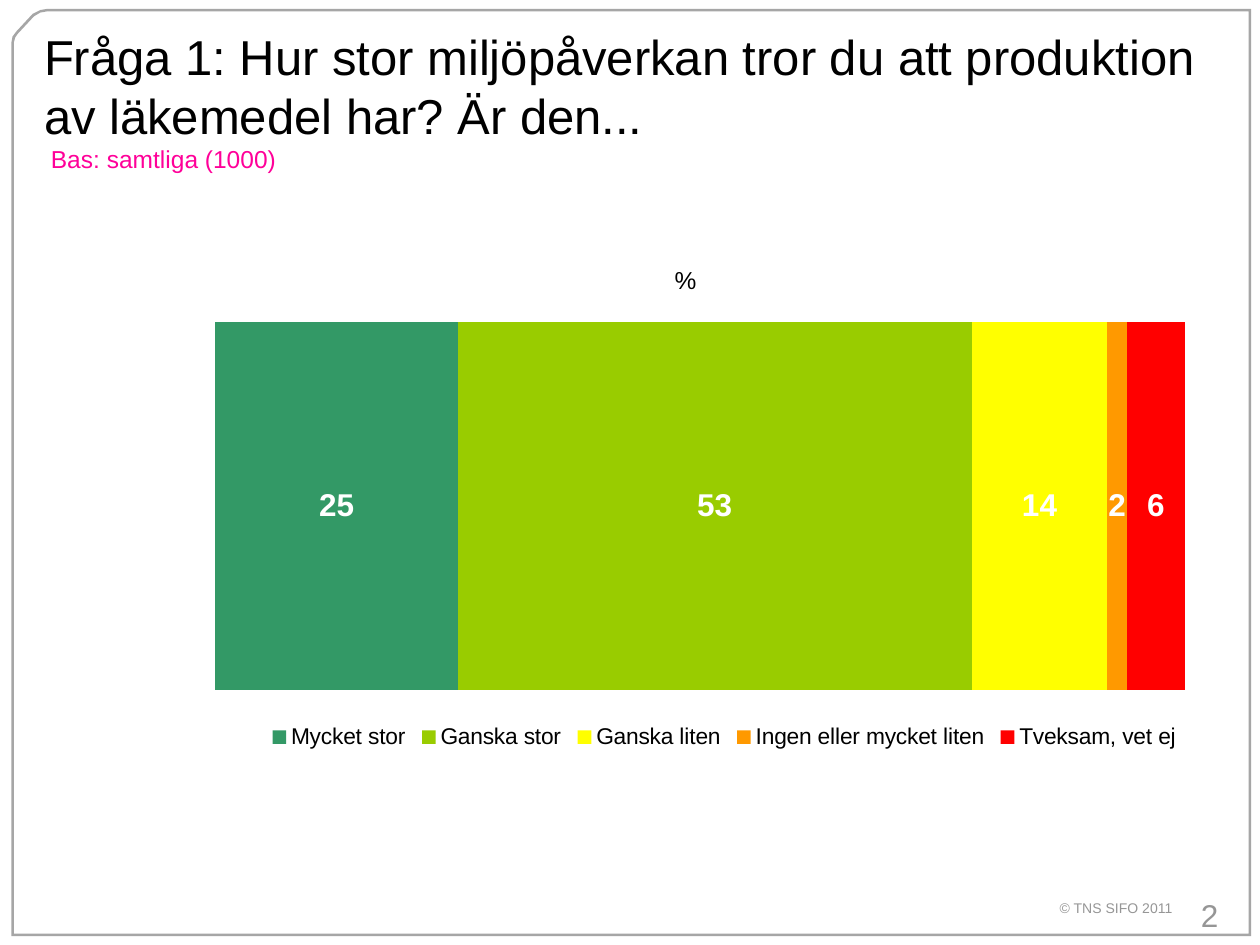
from lxml.etree import SubElement
from pptx import Presentation
from pptx.chart.data import CategoryChartData
from pptx.dml.color import RGBColor
from pptx.enum.chart import XL_CHART_TYPE, XL_LEGEND_POSITION, XL_TICK_LABEL_POSITION, XL_TICK_MARK
from pptx.enum.text import MSO_ANCHOR, MSO_AUTO_SIZE, PP_ALIGN
from pptx.oxml.ns import qn
from pptx.util import Inches, Pt

COLUMNS, ROWS = 100, 75
BLACK, WHITE, GREY, FRAME_GREY, PINK = "000000", "FFFFFF", "969696", "A6A6A6", "FF0099"
ANSWERS = [
    ("Mycket stor", 25, "339966"),
    ("Ganska stor", 53, "99CC00"),
    ("Ganska liten", 14, "FFFF00"),
    ("Ingen eller mycket liten", 2, "FF9900"),
    ("Tveksam, vet ej", 6, "FF0000"),
]
FRAME_OUTER = [(0.9, 74.3), (0.9, 3.4), (1, 2.9), (1.3, 2.5), (2.6, 1.1),
               (3.2, 0.8), (3.8, 0.7), (99.3, 0.7), (99.3, 74.3)]
FRAME_INNER = [(1.1, 74.1), (1.1, 3.4), (1.2, 3), (1.4, 2.7), (2.7, 1.3),
               (3.2, 1), (3.8, 0.9), (99.1, 0.9), (99.1, 74.1)]


def color(value):
    return RGBColor.from_string(value)


def set_font(font, size, value, bold=False):
    font.name = "Arial"
    font.size = Pt(size)
    font.bold = bold
    font.color.rgb = color(value)


def set_layout(parent, before, **shares):
    for old in parent.findall(qn("c:layout")):
        parent.remove(old)
    layout = SubElement(parent, qn("c:layout"))
    manual = SubElement(layout, qn("c:manualLayout"))
    if before == "c:barChart":
        SubElement(manual, qn("c:layoutTarget")).set("val", "inner")
    for name in ("xMode", "yMode"):
        SubElement(manual, qn(f"c:{name}")).set("val", "edge")
    for name, share in shares.items():
        SubElement(manual, qn(f"c:{name}")).set("val", str(share))
    parent.find(qn(before)).addprevious(layout)


class SurveySlide:
    def __init__(self, presentation):
        self.slide = presentation.slides.add_slide(presentation.slide_layouts[5])
        self.column = presentation.slide_width / COLUMNS
        self.row = presentation.slide_height / ROWS

    def place(self, left, top, width, height):
        return (round(left * self.column), round(top * self.row),
                round(width * self.column), round(height * self.row))

    def frame(self, outer, inner):
        builder = self.slide.shapes.build_freeform(
            round(outer[0][0] * self.column), round(outer[0][1] * self.row))
        for index, outline in enumerate((outer, inner)):
            points = [(round(x * self.column), round(y * self.row)) for x, y in outline]
            if index:
                builder.move_to(*points[0])
            builder.add_line_segments(points[1:], close=True)
        shape = builder.convert_to_shape()
        shape.shadow.inherit = False
        shape.fill.solid()
        shape.fill.fore_color.rgb = color(FRAME_GREY)
        shape.line.fill.background()

    def format_frame(self, text_frame, wrap=True):
        text_frame.word_wrap = wrap
        text_frame.auto_size = MSO_AUTO_SIZE.NONE
        text_frame.vertical_anchor = MSO_ANCHOR.TOP
        text_frame.margin_left = text_frame.margin_right = 0
        text_frame.margin_top = text_frame.margin_bottom = 0

    def title(self, question, base, box):
        shape = self.slide.shapes.title
        shape.left, shape.top, shape.width, shape.height = self.place(*box)
        self.format_frame(shape.text_frame)
        paragraph = shape.text_frame.paragraphs[0]
        paragraph.alignment = PP_ALIGN.LEFT
        run = paragraph.add_run()
        run.text = question
        set_font(run.font, 28, BLACK)
        paragraph.add_line_break()
        run = paragraph.add_run()
        run.text = base
        set_font(run.font, 14, PINK)

    def label(self, text, box, size, alignment=PP_ALIGN.LEFT):
        shape = self.slide.shapes.add_textbox(*self.place(*box))
        self.format_frame(shape.text_frame, wrap=False)
        paragraph = shape.text_frame.paragraphs[0]
        paragraph.text = text
        paragraph.alignment = alignment
        set_font(paragraph.font, size, GREY)

    def stacked_bar(self, answers, axis_title, box):
        data = CategoryChartData()
        data.categories = ["1"]
        for name, value, _ in answers:
            data.add_series(name, [value])
        chart = self.slide.shapes.add_chart(
            XL_CHART_TYPE.BAR_STACKED_100, *self.place(*box), data).chart
        chart.has_title = False
        set_font(chart.font, 18, BLACK, bold=True)

        plot = chart.plots[0]
        plot.gap_width, plot.overlap, plot.vary_by_categories = 40, 100, False
        for series, (_, _, fill) in zip(plot.series, answers):
            series.format.fill.solid()
            series.format.fill.fore_color.rgb = color(fill)
            series.data_labels.show_value = True
            set_font(series.data_labels.font, 18, WHITE, bold=True)

        chart.category_axis.visible = False
        chart.category_axis.reverse_order = True
        axis = chart.value_axis
        axis.has_major_gridlines = False
        axis.major_tick_mark = axis.minor_tick_mark = XL_TICK_MARK.NONE
        axis.tick_label_position = XL_TICK_LABEL_POSITION.NONE
        axis.format.line.fill.background()
        paragraph = axis.axis_title.text_frame.paragraphs[0]
        paragraph.text = axis_title
        set_font(paragraph.font, 14, BLACK)

        chart.has_legend = True
        chart.legend.position = XL_LEGEND_POSITION.RIGHT
        chart.legend.include_in_layout = False
        set_font(chart.legend.font, 13, BLACK)

        plot_area = chart.element.find(".//" + qn("c:plotArea"))
        set_layout(plot_area, "c:barChart", x=0.18, y=0.09, w=0.81, h=0.88)
        set_layout(plot_area.find(".//" + qn("c:title")), "c:overlay", x=0.56, y=0.11)
        set_layout(chart.element.find(".//" + qn("c:legend")), "c:overlay",
                   x=0.22, y=0.89, w=0.77, h=0.07)


def main():
    presentation = Presentation()
    presentation.slide_width, presentation.slide_height = Inches(10), Inches(7.5)
    survey = SurveySlide(presentation)
    survey.frame(FRAME_OUTER, FRAME_INNER)
    survey.label("2", (92.7, 71.1, 4, 2.7), 18, PP_ALIGN.RIGHT)
    survey.label("© TNS SIFO 2011", (84.1, 71.4, 9.2, 1.3), 8)
    survey.title("Fråga 1: Hur stor miljöpåverkan tror du att produktion av läkemedel har? Är den...",
                 " Bas: samtliga (1000)", (3.5, 2.1, 93.7, 11.8))
    survey.stacked_bar(ANSWERS, "%", (0, 15.5, 95, 46.5))
    presentation.save("out.pptx")


if __name__ == "__main__":
    main()
